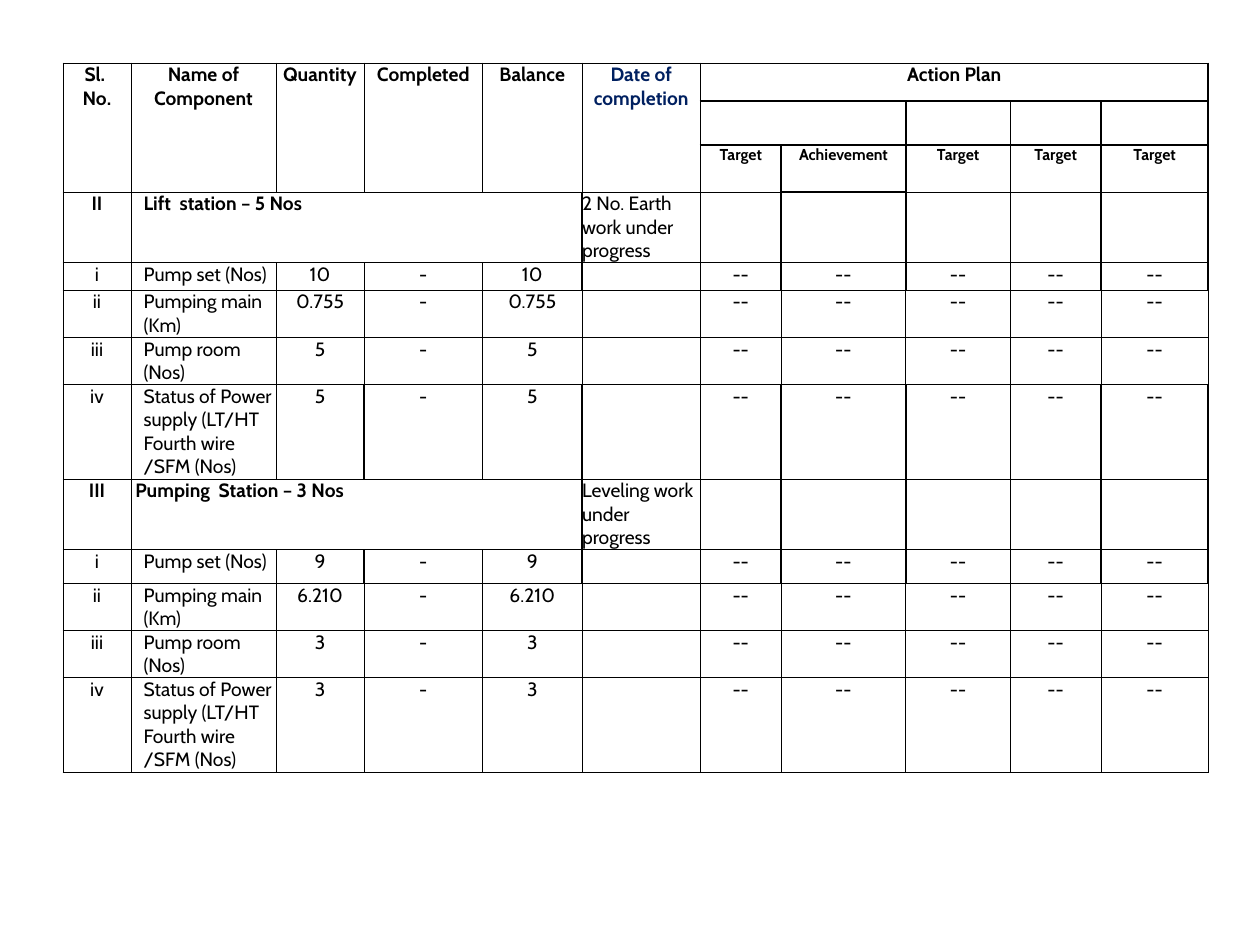
from dataclasses import dataclass

from lxml import etree
from pptx import Presentation
from pptx import util as u
from pptx.dml import color
from pptx.enum import text
from pptx.oxml import ns

FONT = "Cabin"
BLACK = "000000"
NAVY = "002060"
NO_GRID_STYLE = "{2D5ABB26-0587-4C30-8999-92F81FD0307C}"

COLUMN_WIDTHS = [0.54, 1.15, 0.7, 0.94, 0.79, 0.94, 0.64, 0.99, 0.83, 0.72, 0.85]
HEADER_HEIGHTS = [0.3, 0.35, 0.37]
ROW_HEIGHTS = HEADER_HEIGHTS + [
    0.56, 0.22, 0.37, 0.37, 0.75,
    0.56, 0.27, 0.37, 0.37, 0.75,
]
DATE_COLUMN = 5
PLAN_COLUMNS = range(6, 11)

NUMERALS = ["i", "ii", "iii", "iv"]
COMPONENTS = [
    "Pump set (Nos)",
    "Pumping main (Km)",
    "Pump room (Nos)",
    "Status of Power supply (LT/HT Fourth wire /SFM (Nos)",
]
HEADINGS = ["Sl. \nNo.", "Name of Component", "Quantity", "Completed", "Balance", "Date of completion"]

SECTION_EDGES = {5, 6, 7, 8, 9, 10, 11}
HEAVY_VERTICAL = {
    0: {6, 11},
    1: {6, 8, 9, 10, 11},
    2: {6, 7, 8, 9, 10, 11},
    3: SECTION_EDGES,
    4: SECTION_EDGES,
    7: SECTION_EDGES | {3},
    8: SECTION_EDGES,
    9: SECTION_EDGES | {3},
}
HEAVY_HORIZONTAL = {
    1: set(PLAN_COLUMNS),
    2: set(PLAN_COLUMNS),
    3: {7},
    7: {5},
    10: {3},
    11: {3},
    12: {3},
}


@dataclass
class Style:
    size: float = 11
    bold: bool = False
    tint: str = BLACK
    align: text.PP_ALIGN = text.PP_ALIGN.CENTER
    indent: float = 0


@dataclass
class Section:
    numeral: str
    title: str
    title_indent: float
    progress: str
    quantities: list[str]


HEADING = Style(bold=True)
SUBHEADING = Style(size=9, bold=True)
VALUE = Style()
COMPONENT = Style(align=text.PP_ALIGN.LEFT, indent=0.1)
PROGRESS = Style(align=text.PP_ALIGN.LEFT)

SECTIONS = [
    Section("II", "Lift  station – 5 Nos", 0.1, "2 No. Earth work under progress", ["10", "0.755", "5", "5"]),
    Section("III", " Pumping  Station – 3 Nos", 0, "Leveling work under progress", ["9", "6.210", "3", "3"]),
]


def rgb(value: str) -> color.RGBColor:
    return color.RGBColor.from_string(value)


def write(cell, content: str, style: Style) -> None:
    for index, line in enumerate(content.split("\n")):
        frame = cell.text_frame
        para = frame.add_paragraph() if index else frame.paragraphs[0]
        para.alignment = style.align
        if style.indent:
            properties = para._p.get_or_add_pPr()
            properties.set("marL", str(u.Inches(style.indent)))
            properties.set("indent", "0")
        span = para.add_run()
        span.text = line
        span.font.name = FONT
        span.font.size = u.Pt(style.size)
        span.font.bold = style.bold
        span.font.color.rgb = rgb(style.tint)


def prepare(cell) -> None:
    cell.margin_left = cell.margin_right = u.Inches(0)
    cell.margin_top = cell.margin_bottom = u.Inches(0)
    cell.fill.background()
    if not cell.text_frame.text:
        para = cell.text_frame.paragraphs[0]._p
        etree.SubElement(para, ns.qn("a:endParaRPr"), sz="900")


def border(cell, row: int, column: int) -> None:
    right = column + (cell.span_width if cell.is_merge_origin else 1)
    bottom = row + (cell.span_height if cell.is_merge_origin else 1)
    vertical = HEAVY_VERTICAL.get(row, set())
    heavy = {
        "a:lnL": column in vertical,
        "a:lnR": right in vertical,
        "a:lnT": column in HEAVY_HORIZONTAL.get(row, set()),
        "a:lnB": column in HEAVY_HORIZONTAL.get(bottom, set()),
    }
    properties = cell._tc.get_or_add_tcPr()
    for index, (tag, is_heavy) in enumerate(heavy.items()):
        line = etree.Element(ns.qn(tag), w=str(u.Pt(1 if is_heavy else 0.5)))
        fill = etree.SubElement(line, ns.qn("a:solidFill"))
        etree.SubElement(fill, ns.qn("a:srgbClr"), val=BLACK)
        properties.insert(index, line)


def write_header(table) -> None:
    for column, heading in enumerate(HEADINGS):
        table.cell(0, column).merge(table.cell(2, column))
        tint = NAVY if column == DATE_COLUMN else BLACK
        write(table.cell(0, column), heading, Style(bold=True, tint=tint))
    table.cell(0, PLAN_COLUMNS[0]).merge(table.cell(0, PLAN_COLUMNS[-1]))
    write(table.cell(0, PLAN_COLUMNS[0]), "Action Plan", HEADING)
    table.cell(1, 6).merge(table.cell(1, 7))
    for column in PLAN_COLUMNS:
        write(table.cell(2, column), "Achievement" if column == 7 else "Target", SUBHEADING)


def write_section(table, section: Section, top: int) -> None:
    table.cell(top, 1).merge(table.cell(top, 4))
    write(table.cell(top, 0), section.numeral, HEADING)
    title_style = Style(bold=True, align=text.PP_ALIGN.LEFT, indent=section.title_indent)
    write(table.cell(top, 1), section.title, title_style)
    write(table.cell(top, DATE_COLUMN), section.progress, PROGRESS)
    items = zip(NUMERALS, COMPONENTS, section.quantities)
    for row, (numeral, component, quantity) in enumerate(items, top + 1):
        write(table.cell(row, 1), component, COMPONENT)
        values = {0: numeral, 2: quantity, 3: "-", 4: quantity} | dict.fromkeys(PLAN_COLUMNS, "--")
        for column, value in values.items():
            write(table.cell(row, column), value, VALUE)


def main() -> None:
    deck = Presentation()
    deck.slide_width, deck.slide_height = u.Inches(10), u.Inches(7.5)
    page = deck.slides.add_slide(deck.slide_layouts[6])
    table = page.shapes.add_table(
        len(ROW_HEIGHTS), len(COLUMN_WIDTHS),
        u.Inches(0.5), u.Inches(0.5),
        u.Inches(sum(COLUMN_WIDTHS)), u.Inches(sum(ROW_HEIGHTS)),
    ).table
    table.first_row = table.horz_banding = False
    table._tbl.tblPr.find(ns.qn("a:tableStyleId")).text = NO_GRID_STYLE
    for column, width in zip(table.columns, COLUMN_WIDTHS):
        column.width = u.Inches(width)
    for row, height in zip(table.rows, ROW_HEIGHTS):
        row.height = u.Inches(height)

    write_header(table)
    for index, section in enumerate(SECTIONS):
        write_section(table, section, len(HEADER_HEIGHTS) + index * (len(NUMERALS) + 1))
    for row in range(len(ROW_HEIGHTS)):
        for column in range(len(COLUMN_WIDTHS)):
            cell = table.cell(row, column)
            prepare(cell)
            if not cell.is_spanned:
                border(cell, row, column)
    deck.save("out.pptx")


if __name__ == "__main__":
    main()
